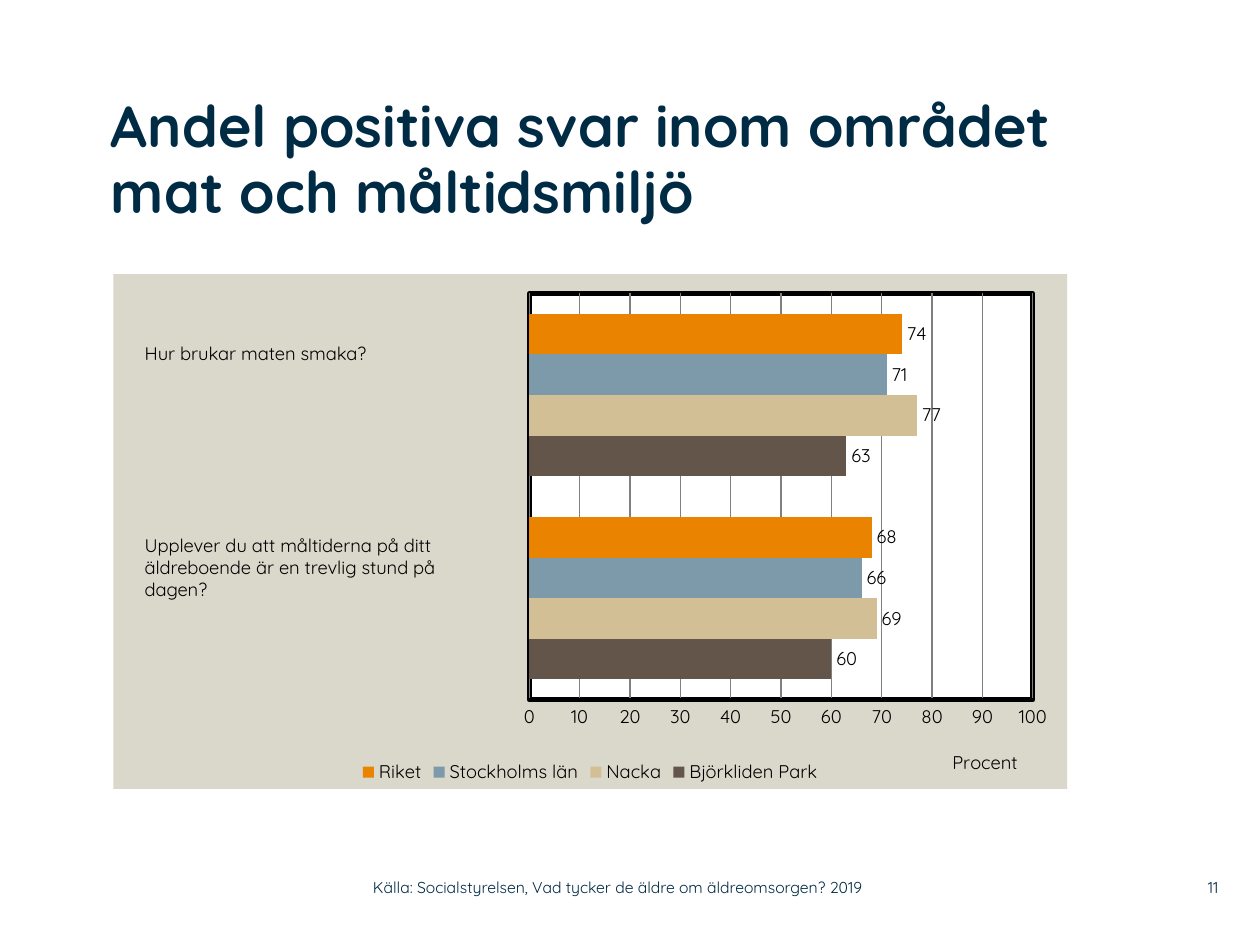
from lxml.etree import SubElement
from pptx import Presentation
from pptx.chart.data import CategoryChartData
from pptx.dml.color import RGBColor
from pptx.enum.chart import XL_CHART_TYPE, XL_LABEL_POSITION, XL_LEGEND_POSITION, XL_TICK_LABEL_POSITION, XL_TICK_MARK
from pptx.enum.text import MSO_ANCHOR, MSO_AUTO_SIZE, PP_ALIGN
from pptx.oxml.ns import qn
from pptx.util import Inches, Pt

HUES = {"navy": "002B45", "black": "000000", "white": "FFFFFF", "stone": "DAD7CB",
        "grid": "808080", "brown": "635549", "sand": "D3BF96", "blue": "7D9AAA",
        "orange": "E98300"}
BARS = [("Björkliden Park", (60, 63), "brown"), ("Nacka", (69, 77), "sand"),
        ("Stockholms län", (66, 71), "blue"), ("Riket", (68, 74), "orange")]


class Deck:
    """Holds the style and the current slide, placing items by shares of its size."""

    font = "Quicksand"

    def __init__(self):
        self.prs = Presentation()
        self.prs.slide_width, self.prs.slide_height = Inches(10), Inches(7.5)
        self.slide = self.prs.slides.add_slide(self.prs.slide_layouts[5])

    def hue(self, name):
        return RGBColor.from_string(HUES[name])

    def put(self, item, values):
        for key, value in values.items():
            setattr(item, key, value)

    def area(self, x, y, w, h):
        wide, high = self.prs.slide_width, self.prs.slide_height
        return [int(n) for n in (x * wide, y * high, w * wide, h * high)]

    def style(self, font, size, hue="black", bold=False):
        self.put(font, {"name": self.font, "size": Pt(size), "bold": bold})
        font.color.rgb = self.hue(hue)

    def fill(self, frame, lines, size, hue="black", bold=False, align=PP_ALIGN.LEFT, gap=None):
        frame.text = "\n".join(lines)
        for para in frame.paragraphs:
            self.put(para, {"alignment": align, "line_spacing": gap})
            self.style(para.runs[0].font, size, hue, bold)

    def bare(self, frame, anchor):
        self.put(frame, {"margin_left": 0, "margin_right": 0, "margin_top": 0,
                         "margin_bottom": 0, "vertical_anchor": anchor,
                         "word_wrap": True, "auto_size": MSO_AUTO_SIZE.NONE})

    def title(self, text, spot):
        shape = self.slide.shapes.title
        self.put(shape, dict(zip(("left", "top", "width", "height"), self.area(*spot))))
        self.bare(shape.text_frame, MSO_ANCHOR.TOP)
        self.fill(shape.text_frame, [text], 33, "navy", True, gap=0.95)

    def note(self, lines, spot):
        frame = self.slide.shapes.add_textbox(*self.area(*spot)).text_frame
        frame.word_wrap = True
        self.fill(frame, lines, 10.5)

    def foot(self, text, spot, align=PP_ALIGN.LEFT):
        frame = self.slide.shapes.add_textbox(*self.area(*spot)).text_frame
        self.bare(frame, MSO_ANCHOR.MIDDLE)
        self.fill(frame, [text], 9, "navy", align=align)

    def place(self, node, after, **spot):
        for old in node.findall(qn("c:layout")):
            node.remove(old)
        box = SubElement(node, qn("c:layout"))
        node.insert(after, box)
        hand = SubElement(box, qn("c:manualLayout"))
        for tag, value in spot.items():
            SubElement(hand, qn(f"c:{tag}")).set("val", str(value))

    def paint(self, node, hue, line=None):
        props = SubElement(node, qn("c:spPr"))
        parts = [props]
        if line:
            parts.append(SubElement(props, qn("a:ln"), w=str(Pt(line))))
        else:
            SubElement(SubElement(props, qn("a:ln")), qn("a:noFill"))
        for part, name in zip(parts, (hue, "black")):
            solid = SubElement(part, qn("a:solidFill"))
            SubElement(solid, qn("a:srgbClr")).set("val", HUES[name])
            part.insert(0, solid)
        return props

    def chart(self, spot):
        data = CategoryChartData()
        data.categories = ["1", "2"]
        for name, values, _ in BARS:
            data.add_series(name, values)
        chart = self.slide.shapes.add_chart(
            XL_CHART_TYPE.BAR_CLUSTERED, *self.area(*spot), data).chart
        self.style(chart.font, 10.5)
        self.put(chart, {"has_title": False, "has_legend": True})
        self.put(chart.legend, {"position": XL_LEGEND_POSITION.BOTTOM, "include_in_layout": False})
        self.style(chart.legend.font, 10.5)
        plot = chart.plots[0]
        self.put(plot, {"gap_width": 100, "overlap": 0, "vary_by_categories": False,
                        "has_data_labels": True})
        self.put(plot.data_labels, {"show_value": True, "position": XL_LABEL_POSITION.OUTSIDE_END})
        self.style(plot.data_labels.font, 10.5)
        for row, (_, _, hue) in zip(plot.series, BARS):
            row.format.fill.solid()
            row.format.fill.fore_color.rgb = self.hue(hue)
        self.axes(chart)
        space = chart.element
        zone = space.chart.plotArea
        self.place(zone, 0, layoutTarget="inner", xMode="edge", yMode="edge",
                   x=0.436, y=0.038, w=0.528, h=0.789)
        self.paint(zone, "white", 3)
        space.chart.addnext(self.paint(space, "stone"))

    def axes(self, chart):
        cat, axis = chart.category_axis, chart.value_axis
        self.put(cat, {"tick_label_position": XL_TICK_LABEL_POSITION.NONE,
                       "major_tick_mark": XL_TICK_MARK.NONE, "visible": False})
        self.put(axis, {"minimum_scale": 0, "maximum_scale": 100, "major_unit": 10,
                        "major_tick_mark": XL_TICK_MARK.NONE, "has_major_gridlines": True})
        self.style(axis.tick_labels.font, 10.5)
        for line, hue, width in ((axis.format.line, "black", 2),
                                 (axis.major_gridlines.format.line, "grid", 0.75)):
            line.color.rgb, line.width = self.hue(hue), Pt(width)
        head = axis.axis_title
        self.fill(head.text_frame, ["Procent"], 10.5)
        self.place(head.text_frame._txBody.getparent().getparent(), 1,
                   xMode="edge", yMode="edge", x=0.876, y=0.915)


def main():
    deck = Deck()
    deck.title("Andel positiva svar inom området mat och måltidsmiljö", (0.088, 0.1, 0.842, 0.19))
    deck.chart((0.09, 0.29, 0.757, 0.545))
    deck.note(["Hur brukar maten smaka?"], (0.105, 0.356, 0.297, 0.037))
    deck.note(["Upplever du att måltiderna på ditt äldreboende är en trevlig stund på", "dagen?"],
              (0.105, 0.559, 0.293, 0.084))
    deck.foot("11", (0.92, 0.919, 0.047, 0.039), PP_ALIGN.RIGHT)
    deck.foot("Källa: Socialstyrelsen, Vad tycker de äldre om äldreomsorgen? 2019",
              (0.296, 0.919, 0.443, 0.039))
    deck.prs.save("out.pptx")


if __name__ == "__main__":
    main()
